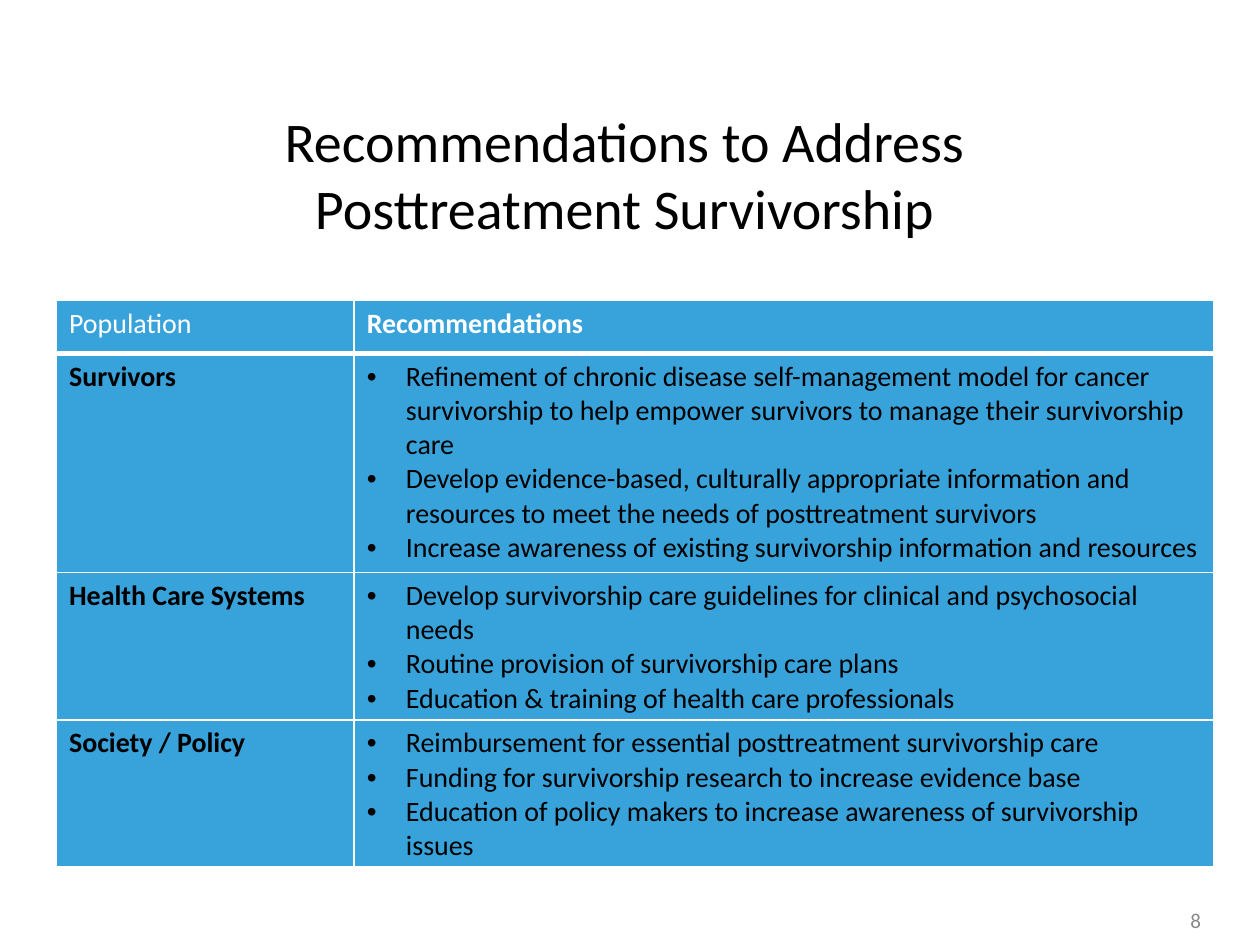
import pptx
import pptx.dml.color
import pptx.enum.text
import pptx.oxml
import pptx.oxml.ns
import pptx.util
from pptx.util import Cm

TITLE = "Recommendations to Address \vPosttreatment Survivorship "
PAGE_NUMBER = "8"
HEADINGS = ("Population", "Recommendations")
RECOMMENDATIONS = {
    "Survivors": [
        "Refinement of chronic disease self-management model for cancer survivorship to help empower survivors to manage their survivorship care",
        "Develop evidence-based, culturally appropriate information and resources to meet the needs of posttreatment survivors",
        "Increase awareness of existing survivorship information and resources",
    ],
    "Health Care Systems": [
        "Develop survivorship care guidelines for clinical and psychosocial needs",
        "Routine provision of survivorship care plans",
        "Education & training of health care professionals",
    ],
    "Society / Policy": [
        "Reimbursement for essential posttreatment survivorship care",
        "Funding for survivorship research to increase evidence base",
        "Education of policy makers to increase awareness of survivorship issues",
    ],
}
THEME = {
    "font": "Calibri",
    "title": {"size": 32, "color": "000000"},
    "number": {"size": 12, "color": "898989"},
    "heading": {"size": 16, "color": "FFFFFF"},
    "body": {"size": 16, "color": "000000"},
    "fill": "38A3DB",
    "border": "FFFFFF",
}
COLUMN_WIDTHS = (6, 17.32)
ROW_HEIGHTS = (1.07, 4.42, 2.97, 2.97)
INDENT = Cm(0.79)
ALIGN = pptx.enum.text.PP_ALIGN


def write(paragraph, words, style, bold=False, align=ALIGN.LEFT):
    paragraph.alignment = align
    paragraph.text = words
    formats = {
        "name": THEME["font"],
        "size": pptx.util.Pt(THEME[style]["size"]),
        "bold": bold,
    }
    for run in paragraph.runs:
        for attribute, value in formats.items():
            setattr(run.font, attribute, value)
        run.font.color.rgb = pptx.dml.color.RGBColor.from_string(THEME[style]["color"])


def add_label(slide, box, words, style, align):
    frame = slide.shapes.add_textbox(*map(Cm, box)).text_frame
    formats = {"word_wrap": True, "vertical_anchor": pptx.enum.text.MSO_ANCHOR.MIDDLE}
    for attribute, value in formats.items():
        setattr(frame, attribute, value)
    write(frame.paragraphs[0], words, style, align=align)


def add_bullet(paragraph):
    properties = paragraph._p.get_or_add_pPr()
    properties.set("marL", str(INDENT))
    properties.set("indent", str(-INDENT))
    namespace = pptx.oxml.ns.nsdecls("a")
    for xml in (f'<a:buFont {namespace} typeface="Arial"/>', f'<a:buChar {namespace} char="•"/>'):
        properties.append(pptx.oxml.parse_xml(xml))


def paint_cell(cell, bottom_width):
    properties = cell._tc.get_or_add_tcPr()
    for side, width in {"L": 1, "R": 1, "T": 1, "B": bottom_width}.items():
        properties.append(pptx.oxml.parse_xml(
            f'<a:ln{side} {pptx.oxml.ns.nsdecls("a")} w="{pptx.util.Pt(width)}">'
            f'<a:solidFill><a:srgbClr val="{THEME["border"]}"/></a:solidFill></a:ln{side}>'
        ))
    cell.fill.solid()
    cell.fill.fore_color.rgb = pptx.dml.color.RGBColor.from_string(THEME["fill"])


def add_recommendations(slide):
    table = slide.shapes.add_table(
        len(ROW_HEIGHTS), len(COLUMN_WIDTHS), Cm(1.14), Cm(6.05),
        Cm(sum(COLUMN_WIDTHS)), Cm(sum(ROW_HEIGHTS)),
    ).table
    for column, width in zip(table.columns, COLUMN_WIDTHS):
        column.width = Cm(width)
    for index, (row, height) in enumerate(zip(table.rows, ROW_HEIGHTS)):
        row.height = Cm(height)
        for cell in row.cells:
            paint_cell(cell, 1 if index else 3)
    for column, heading in enumerate(HEADINGS):
        write(table.cell(0, column).text_frame.paragraphs[0], heading, "heading", bold=column == 1)
    for row, (population, actions) in enumerate(RECOMMENDATIONS.items(), 1):
        write(table.cell(row, 0).text_frame.paragraphs[0], population, "body", bold=True)
        frame = table.cell(row, 1).text_frame
        for position, action in enumerate(actions):
            paragraph = frame.add_paragraph() if position else frame.paragraphs[0]
            add_bullet(paragraph)
            write(paragraph, action, "body")


def main():
    deck = pptx.Presentation()
    deck.slide_width, deck.slide_height = Cm(25.4), Cm(19.05)
    slide = deck.slides.add_slide(deck.slide_layouts[6])
    add_label(slide, (0.97, 2.21, 23.5, 2.59), TITLE, "title", ALIGN.CENTER)
    add_label(slide, (18.21, 18.03, 6.25, 1.02), PAGE_NUMBER, "number", ALIGN.RIGHT)
    add_recommendations(slide)
    deck.save("out.pptx")


if __name__ == "__main__":
    main()
